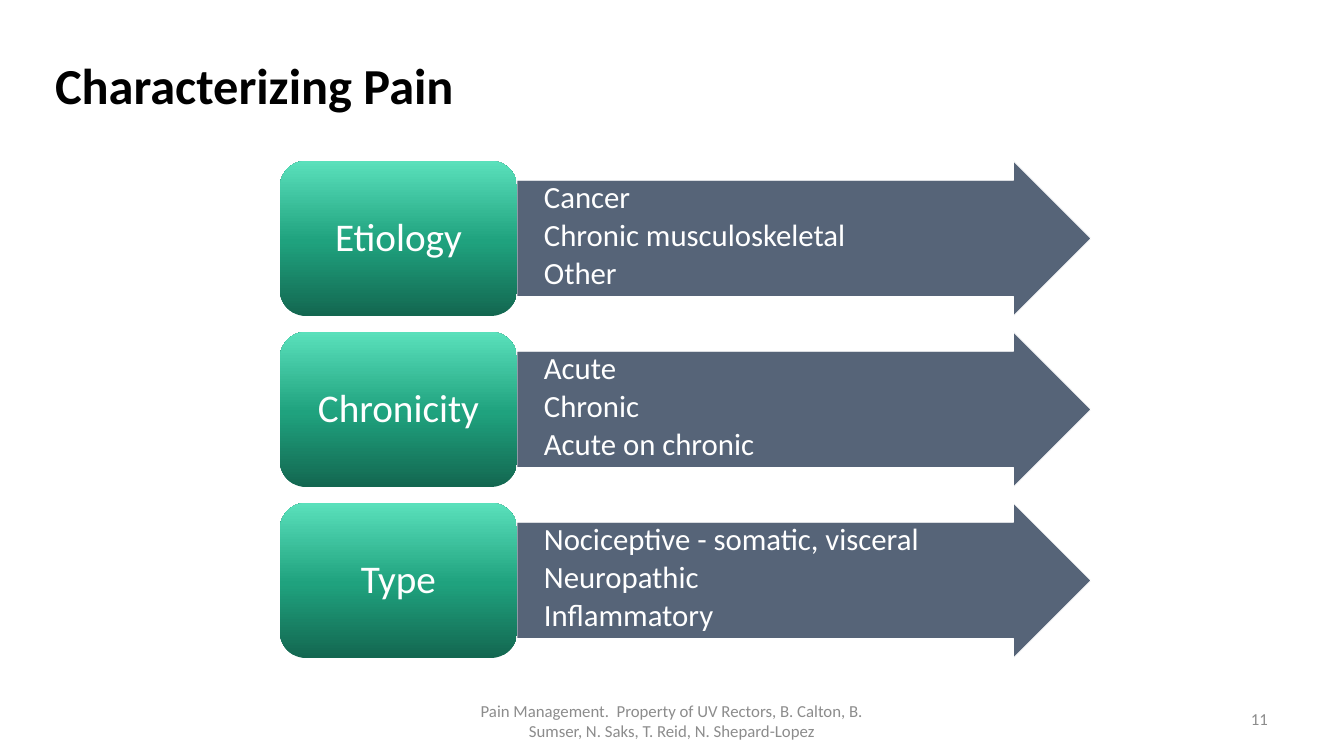
from copy import deepcopy

from lxml.etree import SubElement
from pptx import Presentation
from pptx.dml.color import RGBColor
from pptx.enum.shapes import MSO_SHAPE as Shape
from pptx.enum.text import MSO_ANCHOR as Anchor, PP_ALIGN as Align
from pptx.oxml.ns import qn
from pptx.util import Emu, Pt

SCALE = 914400 / 100.8  # EMU per px


def px(length):
    return Emu(round(length * SCALE))


def color(hex_string):
    return RGBColor.from_string(hex_string)


def write(shape, text, size=12, hex_color="000000", bold=False, align=Align.LEFT,
          anchor=Anchor.MIDDLE, margins=(10, 5, 10, 5), line_spacing=0.9, after=0):
    """Fill a shape with text, one paragraph per line."""
    frame = shape.text_frame
    frame.word_wrap = True
    frame.vertical_anchor = anchor
    (frame.margin_left, frame.margin_top,
     frame.margin_right, frame.margin_bottom) = map(px, margins)
    frame.text = text
    for paragraph in frame.paragraphs:
        paragraph.alignment = align
        paragraph.line_spacing = line_spacing
        paragraph.space_after = Pt(after)
        font = paragraph.font
        font.name, font.size, font.bold = SlideBuilder.FONT, Pt(size), bold
        font.color.rgb = color(hex_color)


class SlideBuilder:
    FONT = "Calibri"
    WHITE, SLATE, GRAY = "FFFFFF", "44546A", "8C8C8C"
    GREENS = ((0, "136750"), (0.48, "1FA27E"), (1, "5AE0BB"))

    def __init__(self, slide):
        self.shapes = slide.shapes

    def label(self, text, box, **text_format):
        write(self.shapes.add_textbox(*map(px, box)), text, **text_format)

    def block(self, kind, box):
        shape = self.shapes.add_shape(kind, *map(px, box))
        shape.shadow.inherit = False
        return shape

    def arrow(self, text, box):
        arrow = self.block(Shape.RIGHT_ARROW, box)
        arrow.adjustments[0], arrow.adjustments[1] = 0.75, 0.5
        arrow.fill.solid()
        arrow.fill.fore_color.rgb = color(self.SLATE)
        fill_color = arrow.element.spPr.find(qn("a:solidFill"))[0]
        SubElement(fill_color, qn("a:alpha"), val="90000")
        arrow.line.color.rgb = color(self.WHITE)
        arrow.line.width = Pt(0.5)
        write(arrow, text, size=22, hex_color=self.WHITE, anchor=Anchor.TOP,
              margins=(27, 2, 2, 2), after=3.3)

    def category(self, text, box):
        category = self.block(Shape.ROUNDED_RECTANGLE, box)
        category.line.fill.background()
        category.fill.gradient()
        category.fill.gradient_angle = 90
        # A third stop for the middle green
        stop_list = category.element.spPr.find(qn("a:gradFill")).find(qn("a:gsLst"))
        stop_list.append(deepcopy(stop_list[0]))
        for stop, (position, green) in zip(category.fill.gradient_stops, self.GREENS):
            stop.position = position
            stop.color.rgb = color(green)
        write(category, text, size=28, hex_color=self.WHITE, align=Align.CENTER)


PAIN_TRAITS = (
    ("Etiology", "Cancer\nChronic musculoskeletal\nOther"),
    ("Chronicity", "Acute\nChronic\nAcute on chronic"),
    ("Type", "Nociceptive - somatic, visceral\nNeuropathic\nInflammatory"),
)


def main():
    deck = Presentation()
    deck.slide_width, deck.slide_height = px(1344), px(756)
    builder = SlideBuilder(deck.slides.add_slide(deck.slide_layouts[6]))

    # Title
    builder.label("Characterizing Pain", (45, 37, 865, 103), size=36, bold=True)

    # One row per trait: category box and arrow with its values
    left, top, pitch, height = 280, 161, 171, 155
    category_width, arrow_width = 237, 574
    for row, (trait, values) in enumerate(PAIN_TRAITS):
        row_top = top + row * pitch
        builder.arrow(values, (left + category_width, row_top, arrow_width, height))
        builder.category(trait, (left, row_top, category_width, height))

    # Slide number and footer
    builder.label("11", (1241, 699, 103, 40), hex_color=builder.GRAY, line_spacing=1.0)
    builder.label("Pain Management.  Property of UV Rectors, B. Calton, B. "
                  "Sumser, N. Saks, T. Reid, N. Shepard-Lopez",
                  (445, 701, 454, 40), hex_color=builder.GRAY, align=Align.CENTER,
                  line_spacing=1.0)

    deck.save("out.pptx")


if __name__ == "__main__":
    main()
